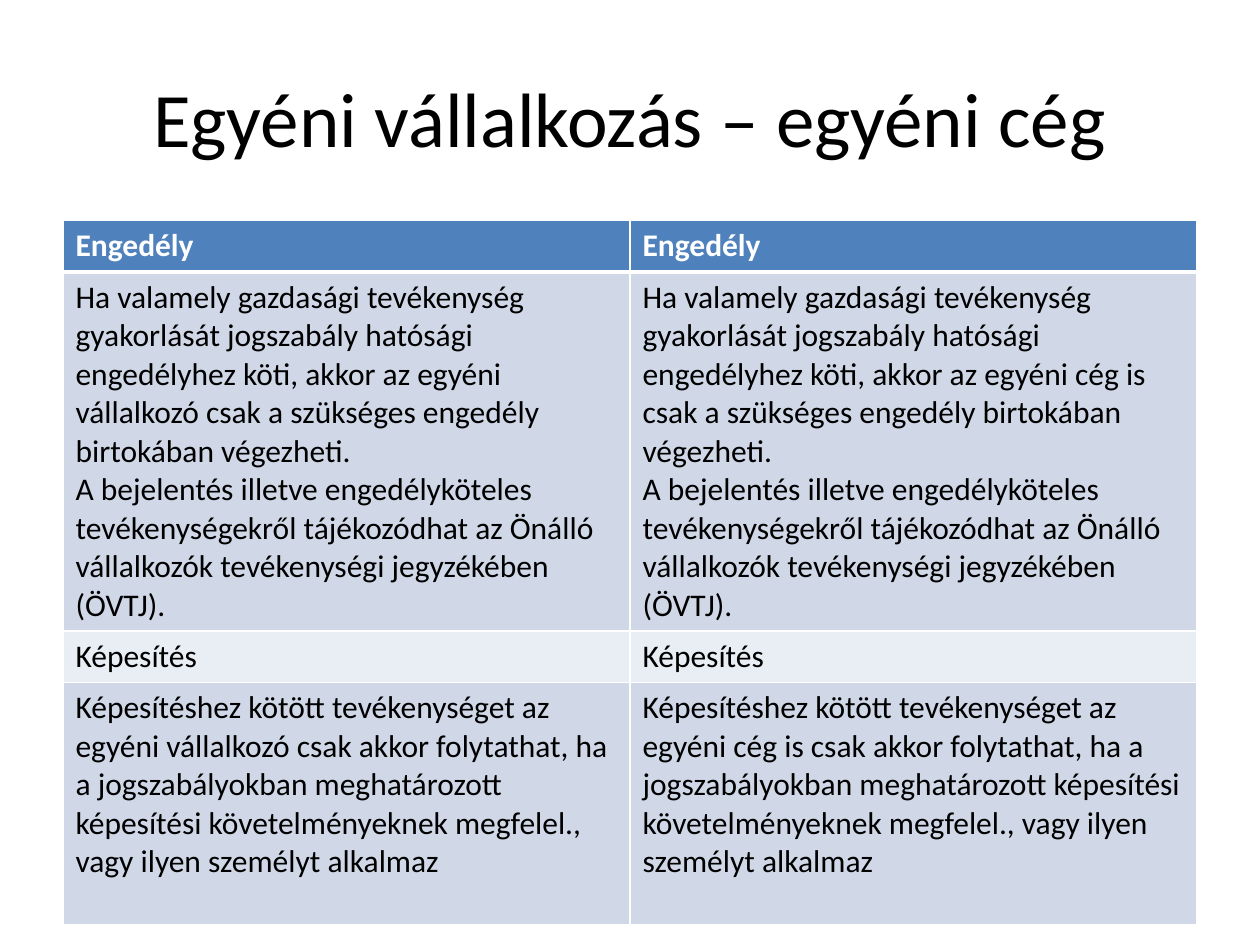
from dataclasses import dataclass

from lxml import etree
from pptx import Presentation
from pptx import util as u
from pptx.dml.color import RGBColor
from pptx.enum import text
from pptx.oxml import ns


@dataclass(frozen=True)
class Theme:
    font: str = "Calibri"
    title_size: int = 44
    body_size: int = 18
    ink: str = "000000"
    paper: str = "FFFFFF"
    header: str = "4F81BD"
    bands: tuple = ("D0D8E8", "E9EDF4")
    rule: int = 1
    header_rule: int = 3


def write(frame, content, *, font, size, color, bold=False, align=text.PP_ALIGN.LEFT):
    frame.text = content
    for paragraph in frame.paragraphs:
        paragraph.alignment = align
        for run in paragraph.runs:
            run.font.name = font
            run.font.size = u.Pt(size)
            run.font.bold = bold
            run.font.color.rgb = RGBColor.from_string(color)


class Builder:
    def __init__(self, slide, theme):
        self.slide = slide
        self.theme = theme

    def title(self, content, left, top, width, height):
        heading = self.slide.shapes.title
        heading.left, heading.top = u.Inches(left), u.Inches(top)
        heading.width, heading.height = u.Inches(width), u.Inches(height)
        heading.text_frame.vertical_anchor = text.MSO_ANCHOR.MIDDLE
        write(heading.text_frame, content, font=self.theme.font,
              size=self.theme.title_size, color=self.theme.ink,
              align=text.PP_ALIGN.CENTER)

    def border(self, cell, side, width):
        line = etree.SubElement(cell._tc.get_or_add_tcPr(), ns.qn(f"a:ln{side}"),
                                w=str(u.Pt(width)))
        fill = etree.SubElement(line, ns.qn("a:solidFill"))
        etree.SubElement(fill, ns.qn("a:srgbClr"), val=self.theme.paper)

    def cell(self, cell, content, row):
        theme = self.theme
        is_header = row == 0
        widths = {"L": theme.rule, "R": theme.rule,
                  "T": theme.header_rule if row == 1 else theme.rule,
                  "B": theme.header_rule if is_header else theme.rule}
        for side, width in widths.items():
            self.border(cell, side, width)
        cell.fill.solid()
        band = theme.header if is_header else theme.bands[(row - 1) % 2]
        cell.fill.fore_color.rgb = RGBColor.from_string(band)
        write(cell.text_frame, content, font=theme.font, size=theme.body_size,
              color=theme.paper if is_header else theme.ink, bold=is_header)

    def table(self, rows, left, top, width, heights):
        comparison = self.slide.shapes.add_table(
            len(rows), len(rows[0]), u.Inches(left), u.Inches(top),
            u.Inches(width), u.Inches(sum(heights))).table
        for row, (contents, height) in enumerate(zip(rows, heights)):
            comparison.rows[row].height = u.Inches(height)
            for column, content in enumerate(contents):
                self.cell(comparison.cell(row, column), content, row)


def permit(business):
    return ("Ha valamely gazdasági tevékenység gyakorlását jogszabály hatósági "
            f"engedélyhez köti, akkor az egyéni {business} csak a szükséges "
            "engedély birtokában végezheti.\n"
            "A bejelentés illetve engedélyköteles tevékenységekről tájékozódhat "
            "az Önálló vállalkozók tevékenységi jegyzékében (ÖVTJ).")


def qualification(business):
    return (f"Képesítéshez kötött tevékenységet az egyéni {business} csak akkor "
            "folytathat, ha a jogszabályokban meghatározott képesítési "
            "követelményeknek megfelel., vagy ilyen személyt alkalmaz")


def main():
    deck = Presentation()
    deck.slide_width, deck.slide_height = u.Inches(10), u.Inches(7.5)
    title_only = deck.slide_layouts[5]
    builder = Builder(deck.slides.add_slide(title_only), Theme())
    builder.title("Egyéni vállalkozás – egyéni cég", 0.5, 0.3, 9, 1.25)
    businesses = ("vállalkozó", "cég is")
    rows = [
        ["Engedély"] * 2,
        [permit(business) for business in businesses],
        ["Képesítés"] * 2,
        [qualification(business) for business in businesses],
    ]
    builder.table(rows, 0.5, 1.75, 9, [0.41, 2.84, 0.41, 1.92])
    deck.save("out.pptx")


if __name__ == "__main__":
    main()
